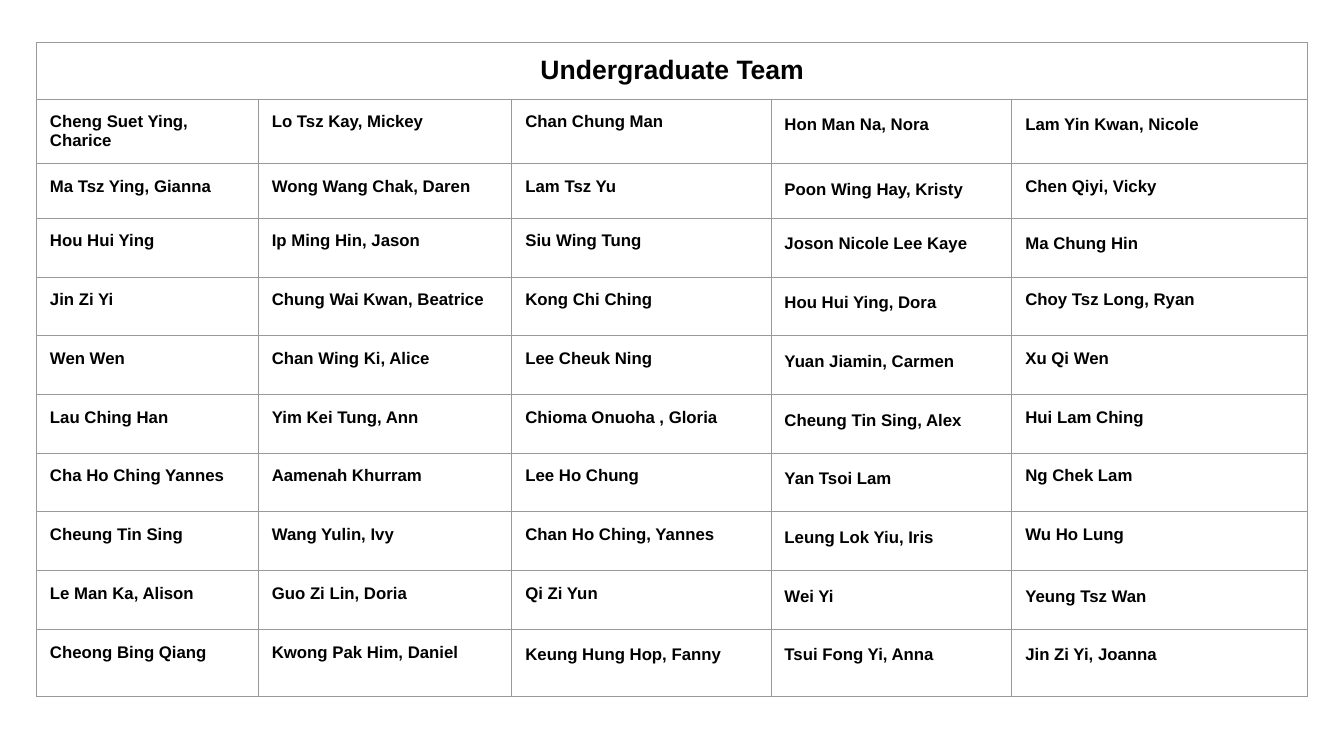
from dataclasses import dataclass

from lxml.etree import SubElement
from pptx import Presentation
from pptx.dml.color import RGBColor
from pptx.enum.text import PP_ALIGN
from pptx.oxml.ns import qn
from pptx.util import Cm, Pt


@dataclass(frozen=True)
class Theme:
    """Hold the colours, font and type sizes."""
    face: str = "Arial"
    ink: RGBColor = RGBColor(0, 0, 0)
    rule: str = "999999"
    head: Pt = Pt(19)
    body: Pt = Pt(12)
    line: Pt = Pt(0.75)
    pad: Cm = Cm(0.34)


THEME = Theme()
TITLE = "Undergraduate Team"
TEAM = [
    ["Cheng Suet Ying, Charice", "Lo Tsz Kay, Mickey", "Chan Chung Man",
     "Hon Man Na, Nora", "Lam Yin Kwan, Nicole"],
    ["Ma Tsz Ying, Gianna", "Wong Wang Chak, Daren", "Lam Tsz Yu",
     "Poon Wing Hay, Kristy", "Chen Qiyi, Vicky"],
    ["Hou Hui Ying", "Ip Ming Hin, Jason", "Siu Wing Tung",
     "Joson Nicole Lee Kaye", "Ma Chung Hin"],
    ["Jin Zi Yi", "Chung Wai Kwan, Beatrice", "Kong Chi Ching",
     "Hou Hui Ying, Dora", "Choy Tsz Long, Ryan"],
    ["Wen Wen", "Chan Wing Ki, Alice", "Lee Cheuk Ning",
     "Yuan Jiamin, Carmen", "Xu Qi Wen"],
    ["Lau Ching Han", "Yim Kei Tung, Ann", "Chioma Onuoha , Gloria",
     "Cheung Tin Sing, Alex", "Hui Lam Ching"],
    ["Cha Ho Ching Yannes", "Aamenah Khurram", "Lee Ho Chung",
     "Yan Tsoi Lam", "Ng Chek Lam"],
    ["Cheung Tin Sing", "Wang Yulin, Ivy", "Chan Ho Ching, Yannes",
     "Leung Lok Yiu, Iris", "Wu Ho Lung"],
    ["Le Man Ka, Alison", "Guo Zi Lin, Doria", "Qi Zi Yun",
     "Wei Yi", "Yeung Tsz Wan"],
    ["Cheong Bing Qiang", "Kwong Pak Him, Daniel", "Keung Hung Hop, Fanny",
     "Tsui Fong Yi, Anna", "Jin Zi Yi, Joanna"],
]
WIDTHS = [5.59, 6.39, 6.53, 6.07, 7.46]
HEIGHTS = [1.43, 1.62, 1.37] + [1.48] * 7 + [1.69]
LOOSE = {(row, 3) for row in range(10)} | {(0, 4), (2, 4), (8, 4), (9, 4), (9, 2)}
LEFT = {(0, 0), (1, 0), (8, 2)} | LOOSE | {(row, 4) for row in range(10)}


def add_rules(cell):
    """Draw a thin line on each side of a cell."""
    props = cell._tc.get_or_add_tcPr()
    for side in ("a:lnL", "a:lnR", "a:lnT", "a:lnB"):
        line = SubElement(props, qn(side), w=str(THEME.line))
        fill = SubElement(line, qn("a:solidFill"))
        SubElement(fill, qn("a:srgbClr"), val=THEME.rule)


def set_cell(cell, text, size, align, space=None):
    """Fill one cell with bold text and give it its borders."""
    cell.margin_left = cell.margin_right = THEME.pad
    cell.margin_top = cell.margin_bottom = THEME.pad
    add_rules(cell)
    cell.fill.background()
    cell.text = text
    para = cell.text_frame.paragraphs[0]
    para.alignment = align
    para.line_spacing = space
    font = para.font
    font.name, font.size, font.bold = THEME.face, size, True
    font.color.rgb = THEME.ink


def add_grid(slide):
    """Add the empty table with its column widths and row heights."""
    frame = slide.shapes.add_table(
        len(HEIGHTS), len(WIDTHS), Cm(0.92), Cm(1.07),
        Cm(sum(WIDTHS)), Cm(sum(HEIGHTS)))
    grid = frame.table
    grid.first_row = grid.horz_banding = False
    for col, width in zip(grid.columns, WIDTHS):
        col.width = Cm(width)
    for row, height in zip(grid.rows, HEIGHTS):
        row.height = Cm(height)
    return grid


def fill_grid(grid):
    """Write the title row and the names."""
    for cell in grid.rows[0].cells:
        add_rules(cell)
    for row, names in enumerate(TEAM):
        for col, name in enumerate(names):
            spot = (row, col)
            align = PP_ALIGN.LEFT if spot in LEFT else PP_ALIGN.JUSTIFY
            space = 1.15 if spot in LOOSE else None
            set_cell(grid.cell(row + 1, col), name, THEME.body, align, space)
    head = grid.cell(0, 0)
    head.merge(grid.cell(0, len(WIDTHS) - 1))
    set_cell(head, TITLE, THEME.head, PP_ALIGN.CENTER)


def main():
    """Build the slide and save it."""
    deck = Presentation()
    deck.slide_width, deck.slide_height = Cm(33.87), Cm(19.05)
    slide = deck.slides.add_slide(deck.slide_layouts[6])
    fill_grid(add_grid(slide))
    deck.save("out.pptx")


if __name__ == "__main__":
    main()
